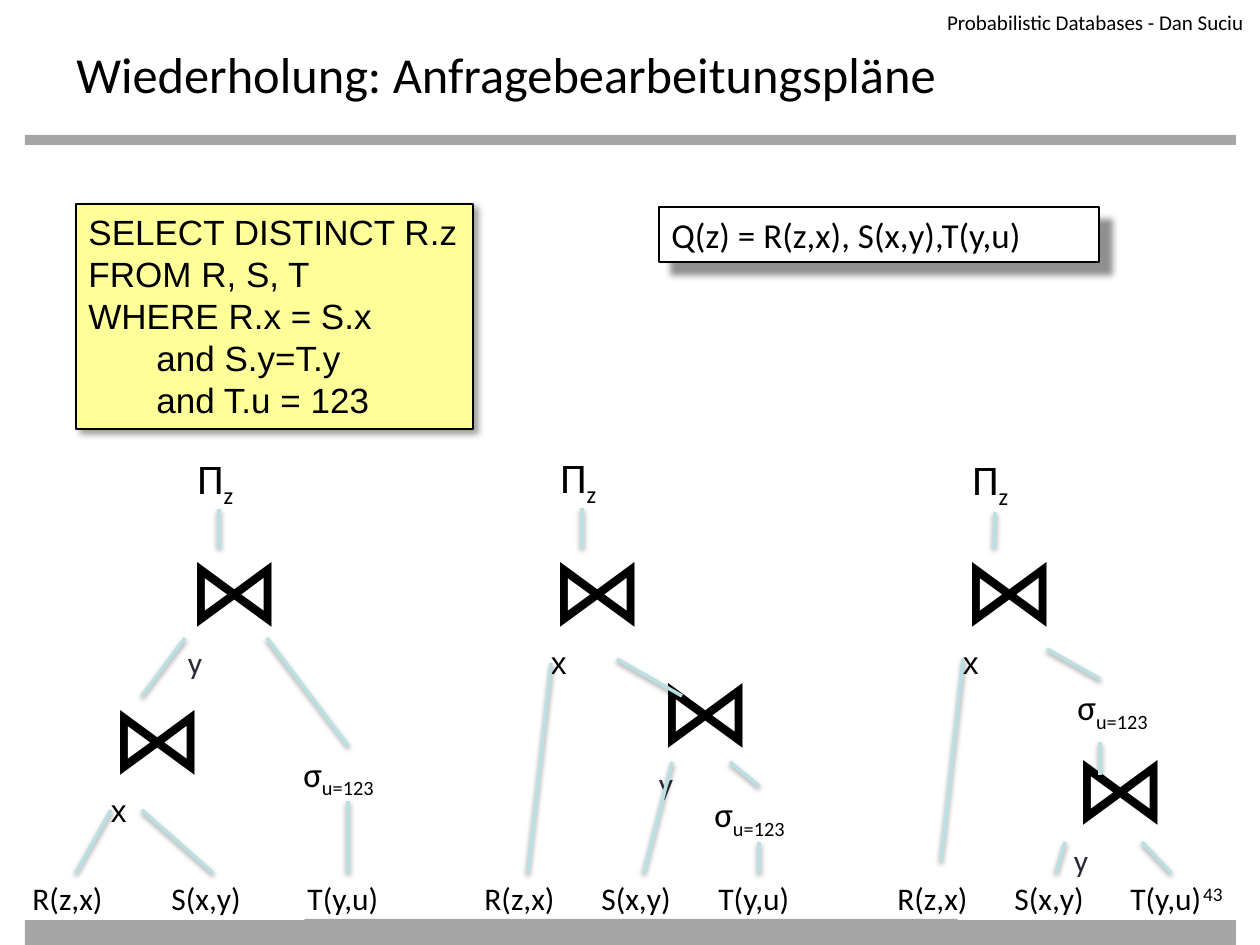
from lxml.etree import SubElement
from pptx import Presentation
from pptx.dml.color import RGBColor
from pptx.enum.shapes import MSO_CONNECTOR, MSO_SHAPE
from pptx.enum.text import MSO_ANCHOR, MSO_AUTO_SIZE, PP_ALIGN
from pptx.oxml.ns import qn
from pptx.util import Pt

SCALE = 914400 / 126  # EMU per px
COLORS = {"black": "000000", "white": "FFFFFF", "bar": "A6A6A6",
          "sql": "FFFF99", "edge": "BBE0E3", "dark": "292934"}
RGB = {name: RGBColor.from_string(value) for name, value in COLORS.items()}


def write(sp, paragraphs, align=PP_ALIGN.LEFT, **frame):
    """Fill a shape with paragraphs, each a list of (text, size, font, colour, baseline)."""
    tf = sp.text_frame
    frame = {"word_wrap": True, "vertical_anchor": MSO_ANCHOR.TOP} | frame
    for key, value in frame.items():
        setattr(tf, key, value)
    for i, runs in enumerate(paragraphs):
        p = tf.add_paragraph() if i else tf.paragraphs[0]
        p.alignment = align
        for text, size, font, color, baseline in runs:
            for j, line in enumerate(text.split("\n")):
                if j:
                    p.add_line_break()
                r = p.add_run()
                r.text = line
                for key, value in {"size": Pt(size), "name": font}.items():
                    setattr(r.font, key, value)
                r.font.color.rgb = RGB[color]
                if baseline:
                    r.font._element.set("baseline", str(baseline * 1000))


def add_shadow(sp, alpha, blur, dist, angle):
    """Give a shape or connector an outer black shadow, lengths in points."""
    effects = SubElement(sp._element.spPr, qn("a:effectLst"))
    outer = SubElement(effects, qn("a:outerShdw"), blurRad=str(Pt(blur)),
                       dist=str(Pt(dist)), dir=str(angle * 60000),
                       algn="ctr", rotWithShape="0")
    color = SubElement(outer, qn("a:srgbClr"), val=COLORS["black"])
    SubElement(color, qn("a:alpha"), val=str(alpha * 1000))


prs = Presentation()
prs.slide_width, prs.slide_height = round(1260 * SCALE), round(945 * SCALE)
s = prs.slides.add_slide(prs.slide_layouts[6])

# Bars, and the white areas over the ends of the footer
for box, fill, line in [((25, 135, 1211, 10), "bar", None),
                        ((25, 919, 1211, 26), "bar", None),
                        ((958, 839, 302, 80), "white", "white"),
                        ((1, 839, 303, 80), "white", "white")]:
    sp = s.shapes.add_shape(MSO_SHAPE.RECTANGLE, *[round(v * SCALE) for v in box])
    sp.shadow.inherit = False
    sp.fill.solid()
    sp.fill.fore_color.rgb = RGB[fill]
    if line:
        sp.line.color.rgb = RGB[line]
        sp.line.width = Pt(0.75)
    else:
        sp.line.fill.background()

# Title, slide number and running head
NO_INSET = {"margin_left": 0, "margin_top": 0, "margin_bottom": 0}
for box, text, size, align, frame in [
        ((64, 37, 1134, 69), "Wiederholung: Anfragebearbeitungspläne", 28.8, PP_ALIGN.LEFT, {}),
        ((1096, 882, 139, 28), "43", 11, PP_ALIGN.RIGHT, NO_INSET),
        ((689, 3, 567, 45), "Probabilistic Databases - Dan Suciu", 12, PP_ALIGN.RIGHT, {})]:
    sp = s.shapes.add_textbox(*[round(v * SCALE) for v in box])
    write(sp, [[(text, size, "Calibri", "black", 0)]], align, **frame)

# Query as SQL and as a rule
SQL = ["SELECT DISTINCT R.z",
       "FROM R, S, T\nWHERE R.x = S.x\n       and S.y=T.y\n       and T.u = 123"]
RULE = ["Q(z) = R(z,x), S(x,y),T(y,u)"]
for box, lines, font, fill, shadow in [
        ((76, 204, 397, 225), SQL, "Arial", "sql", (40, 4, 3, 45)),
        ((659, 207, 440, 55), RULE, "Calibri", "white", (43, 4, 10, 45))]:
    sp = s.shapes.add_shape(MSO_SHAPE.RECTANGLE, *[round(v * SCALE) for v in box])
    sp.fill.solid()
    sp.fill.fore_color.rgb = RGB[fill]
    sp.line.color.rgb = RGB["black"]
    sp.line.width = Pt(0.75)
    add_shadow(sp, *shadow)
    write(sp, [[(line, 20, font, "black", 0)] for line in lines],
          word_wrap=False, auto_size=MSO_AUTO_SIZE.SHAPE_TO_FIT_TEXT)

# Plan operators: width, height, runs
JOIN = {"vertical_anchor": MSO_ANCHOR.MIDDLE, "margin_right": 0} | NO_INSET
NODES = {
    "join y": (63, 115, [("⋈", 54, "Calibri", "black", 0), ("y", 18, "Calibri", "dark", 0)]),
    "project": (71, 63, [("Π", 24, "Calibri", "black", 0), ("z", 24, "Calibri", "black", -25)]),
    "join x": (63, 115, [("⋈", 54, "Arial", "black", 0), ("x", 18, "Arial", "black", 0)]),
    "select": (113, 55, [("σ", 20, "Calibri", "black", 0), ("u=123", 20, "Calibri", "black", -25)]),
}
for name, width in [("R(z,x)", 110), ("S(x,y)", 108), ("T(y,u)", 106)]:
    NODES[name] = (width, 50, [(name, 18, "Calibri", "black", 0)])
LEAF_Y = 873

# Three plans: node positions and edges
PLANS = [
    ({"join y": (188, 548), "project": (185, 446), "join x": (111, 696), "select": (291, 746),
      "R(z,x)": (20, LEAF_Y), "S(x,y)": (159, LEAF_Y), "T(y,u)": (295, LEAF_Y)},
     [(76, 873, 111, 810), (213, 873, 142, 810), (185, 638, 142, 696),
      (348, 873, 348, 801), (267, 638, 348, 746), (219, 548, 219, 509)]),
    ({"join y": (659, 669), "project": (548, 445), "join x": (551, 548), "select": (702, 786),
      "R(z,x)": (472, LEAF_Y), "S(x,y)": (589, LEAF_Y), "T(y,u)": (706, LEAF_Y)},
     [(582, 548, 582, 508), (528, 873, 551, 663), (682, 696, 617, 659),
      (644, 873, 672, 762), (759, 786, 730, 762), (759, 873, 759, 842)]),
    ({"join y": (1074, 746), "project": (960, 447), "join x": (963, 548), "select": (1065, 679),
      "R(z,x)": (885, LEAF_Y), "S(x,y)": (1002, LEAF_Y), "T(y,u)": (1118, LEAF_Y)},
     [(994, 548, 995, 512), (941, 861, 963, 659), (1100, 775, 1100, 742),
      (1100, 679, 1047, 649), (1056, 873, 1065, 842), (1142, 842, 1171, 873)]),
]
for nodes, edges in PLANS:
    plan = s.shapes.add_group_shape()
    for name, (x, y) in nodes.items():
        width, height, runs = NODES[name]
        sp = plan.shapes.add_textbox(*[round(v * SCALE) for v in (x, y, width, height)])
        is_join = name.startswith("join")
        write(sp, [runs], word_wrap=is_join, auto_size=MSO_AUTO_SIZE.SHAPE_TO_FIT_TEXT,
              **(JOIN if is_join else {}))
    for edge in edges:
        line = plan.shapes.add_connector(MSO_CONNECTOR.STRAIGHT,
                                         *[round(v * SCALE) for v in edge])
        line.line.color.rgb = RGB["edge"]
        line.line.width = Pt(2)
        add_shadow(line, 38, 3.1, 1.6, 90)

prs.save("out.pptx")
